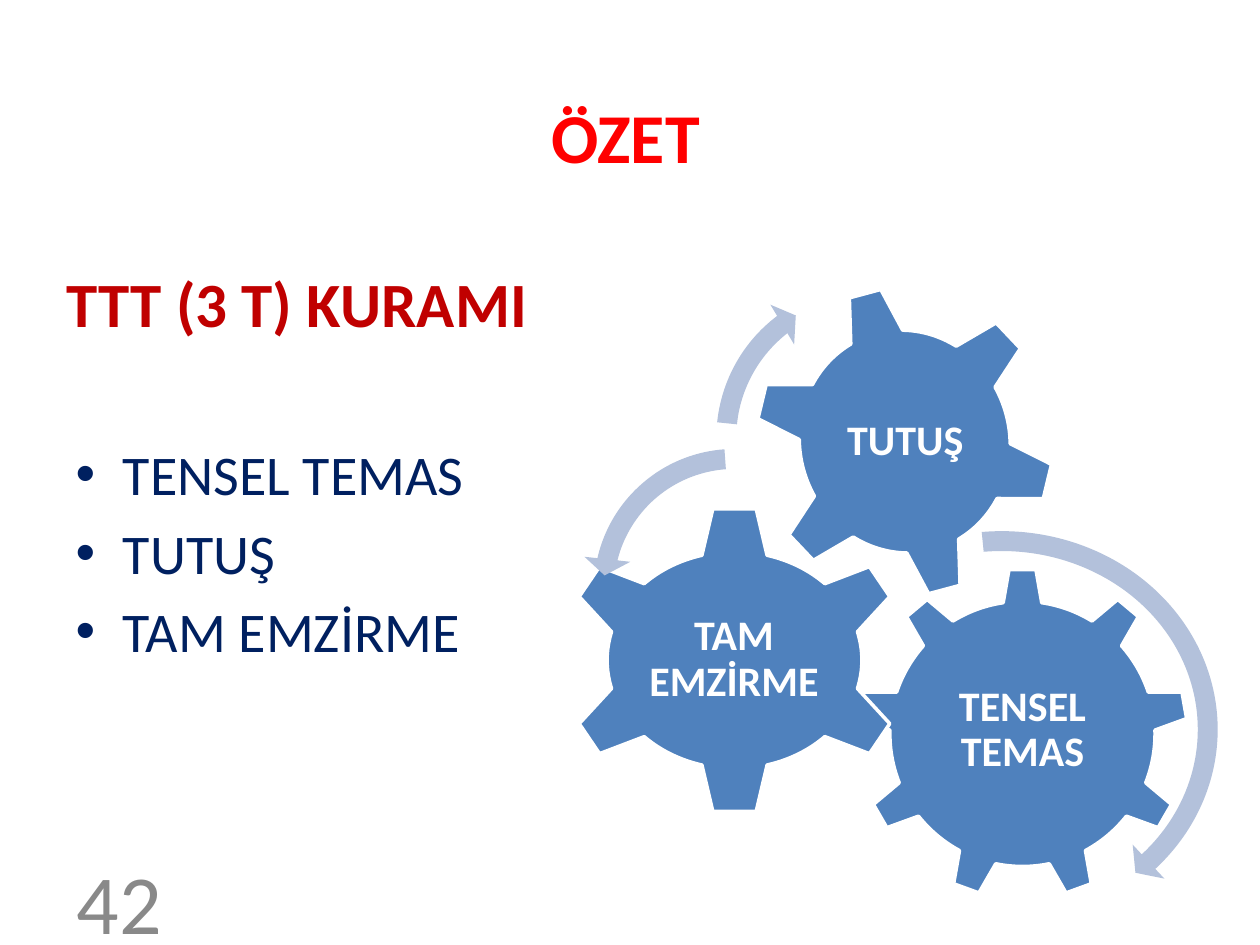
import pptx
import pptx.dml.color
import pptx.enum.shapes
import pptx.enum.text
import pptx.util

Pt = pptx.util.Pt
SHAPES = pptx.enum.shapes.MSO_SHAPE
ALIGN = pptx.enum.text.PP_ALIGN
MIDDLE = pptx.enum.text.MSO_ANCHOR.MIDDLE

COLORS = {
    "heading": "FF0000",
    "theory": "C00000",
    "list": "002060",
    "number": "898989",
    "gear": "4F81BD",
    "arrow": "B3C1DB",
    "white": "FFFFFF",
}

GEARS = [
    (SHAPES.GEAR_9, (489.6, 324.7, 189.4, 189.4), 0, "TENSEL TEMAS", (527.8, 368.6, 113, 97.2)),
    (SHAPES.GEAR_6, (320.4, 288.7, 198.7, 177.1), 0, "TAM EMZİRME", (367.9, 333.4, 103, 87.1)),
    (SHAPES.GEAR_6, (431.3, 162.7, 171.4, 179.3), 345, "TUTUŞ", (468.7, 202.3, 97.2, 100.1)),
]

ARROWS = [
    (SHAPES.CIRCULAR_ARROW, (441.4, 295.9, 262.1, 241.9), 0,
     (0.047, 2.99, 25.2, 158.53, 0.055)),
    (SHAPES.LEFT_CIRCULAR_ARROW, (331.9, 249.1, 175.7, 175.7), 18.6,
     (0.065, 4.3, 104.89, 148.38, 0.075)),
    (SHAPES.CIRCULAR_ARROW, (401.8, 155.5, 189.4, 189.4), 10.7,
     (0.06, 3.94, 133.14, 105.08, 0.07)),
]


def color(name):
    """Return the named colour."""
    return pptx.dml.color.RGBColor.from_string(COLORS[name])


def place(shape, box):
    """Move and size a shape to a box given in points."""
    shape.left, shape.top, shape.width, shape.height = map(Pt, box)


def format_runs(paragraph, size, color_name, bold=False):
    """Format every run of a paragraph."""
    for run in paragraph.runs:
        run.font.name = "Calibri"
        run.font.size = Pt(size)
        run.font.bold = bold
        run.font.color.rgb = color(color_name)


def add_title(slide, text, box):
    """Fill the title placeholder."""
    title = slide.shapes.title
    place(title, box)
    title.text_frame.text = text
    title.text_frame.vertical_anchor = MIDDLE
    paragraph = title.text_frame.paragraphs[0]
    paragraph.alignment = ALIGN.LEFT
    format_runs(paragraph, 36, "theory", bold=True)


def add_list(slide, items, box):
    """Fill the body placeholder with a bulleted list."""
    body = slide.placeholders[1]
    place(body, box)
    body.text_frame.text = "\n".join(items)
    for index, paragraph in enumerate(body.text_frame.paragraphs):
        paragraph.space_before = Pt(6.4 if index else 0)
        format_runs(paragraph, 32, "list")


def add_text(slide, text, box, size, color_name, alignment=ALIGN.CENTER, bold=True, inset=None):
    """Add a vertically centred text box and return its paragraph."""
    shape = slide.shapes.add_textbox(*map(Pt, box))
    frame = shape.text_frame
    frame.word_wrap = True
    frame.vertical_anchor = MIDDLE
    if inset is not None:
        frame.margin_left = frame.margin_right = Pt(inset)
        frame.margin_top = frame.margin_bottom = Pt(inset)
    frame.text = text
    paragraph = frame.paragraphs[0]
    paragraph.alignment = alignment
    format_runs(paragraph, size, color_name, bold)
    return paragraph


def add_filled_shape(slide, kind, box, rotation, color_name):
    """Add a solid preset shape without a shadow."""
    shape = slide.shapes.add_shape(kind, *map(Pt, box))
    shape.rotation = rotation
    shape.shadow.inherit = False
    shape.fill.solid()
    shape.fill.fore_color.rgb = color(color_name)
    return shape


def add_gear(slide, kind, box, rotation, label, label_box):
    """Add a gear with its upright label."""
    gear = add_filled_shape(slide, kind, box, rotation, "gear")
    gear.line.color.rgb = color("white")
    gear.line.width = Pt(2)
    paragraph = add_text(slide, label, label_box, 24, "white", inset=2.4)
    paragraph.line_spacing = 0.9


def add_arrow(slide, kind, box, rotation, adjustments):
    """Add a curved arrow showing the direction of a gear."""
    arrow = add_filled_shape(slide, kind, box, rotation, "arrow")
    arrow.line.fill.background()
    for index, value in enumerate(adjustments):
        arrow.adjustments[index] = value


def main():
    """Build the summary slide."""
    presentation = pptx.Presentation()
    presentation.slide_width, presentation.slide_height = Pt(720), Pt(540)
    slide = presentation.slides.add_slide(presentation.slide_layouts[1])
    add_title(slide, "TTT (3 T) KURAMI", (31, 128, 317.5, 90))
    add_list(slide, ["TENSEL TEMAS", "TUTUŞ", "TAM EMZİRME"], (36, 247.7, 278.6, 234.7))
    add_text(slide, "42", (36.7, 500.4, 167.8, 28.8), 48, "number", ALIGN.LEFT, bold=False)
    for gear in GEARS:
        add_gear(slide, *gear)
    for arrow in ARROWS:
        add_arrow(slide, *arrow)
    add_text(slide, "ÖZET", (235.4, 49.7, 244.1, 55.4), 40, "heading")
    presentation.save("out.pptx")


if __name__ == "__main__":
    main()
